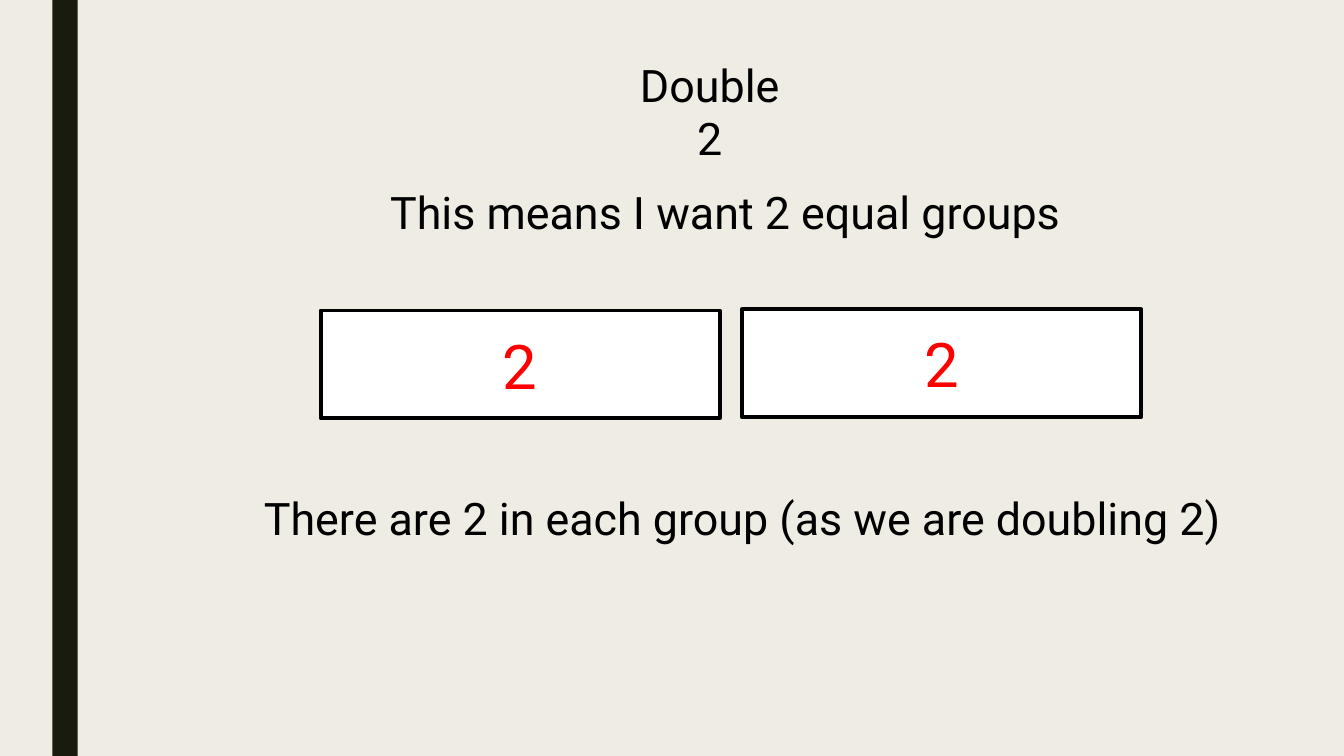
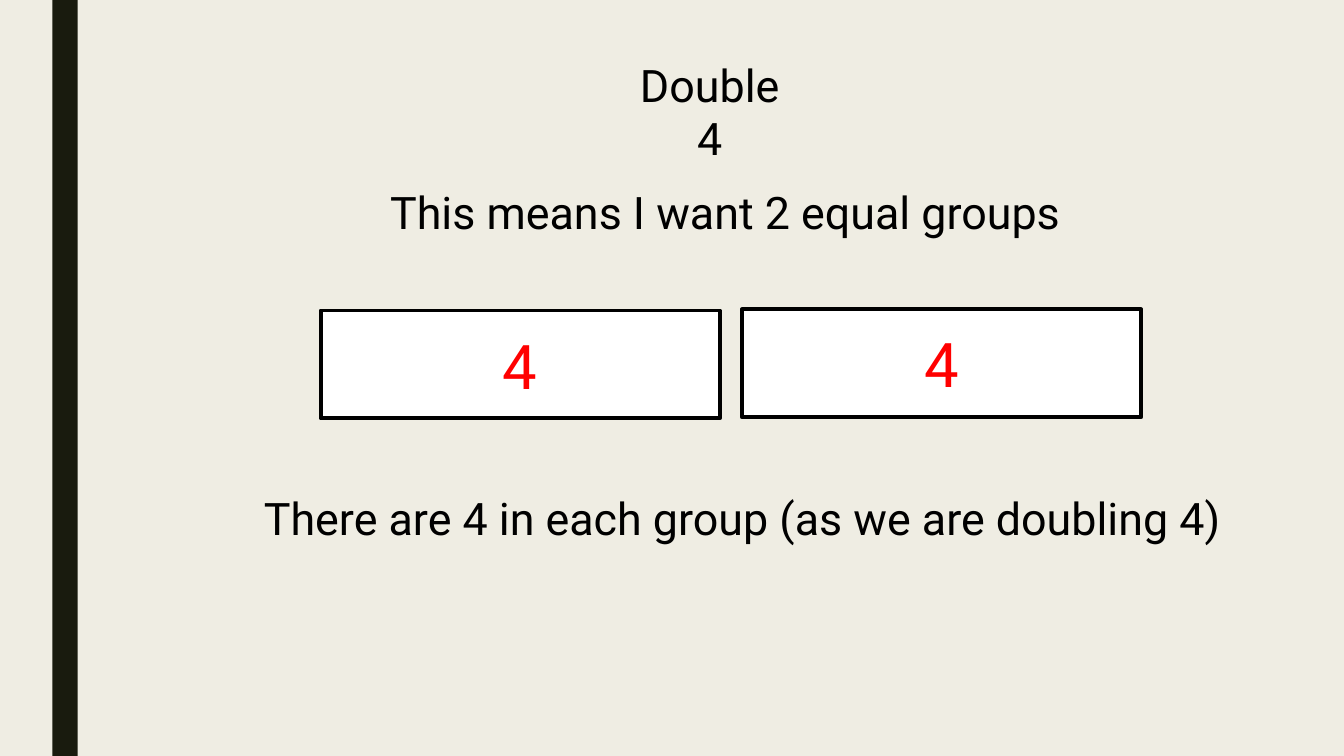
from pptx import Presentation, util as u
from pptx.dml.color import RGBColor
from pptx.enum import shapes, text

WIDTH, HEIGHT = u.Inches(13.333), u.Inches(7.5)
FONT = "Roboto"
COLOURS = {
    "paper": "EFEDE3",
    "band": "191B0E",
    "ink": "000000",
    "group": "FFFFFF",
    "number": "FF0000",
}
# Places are (left, top, width, height) in percent of the slide's size.
BAND = (3.9, 0, 1.88, 100)
TITLE = (45.69, 6.93, 14.25, 15.33)
MEANING = (10.65, 23.73, 86.65, 8.53)
CONCLUSION = (11.93, 64.27, 86.65, 8.53)
GROUPS = [(23.86, 41.07, 29.7, 14.27), (55.21, 40.93, 29.7, 14.27)]


def colour(name):
    return RGBColor.from_string(COLOURS[name])


def place(left, top, width, height):
    """Turn percentages of the slide into lengths."""
    return [round(share * side / 100) for share, side in
            ((left, WIDTH), (top, HEIGHT), (width, WIDTH), (height, HEIGHT))]


def write(shape, words, size, ink):
    frame = shape.text_frame
    frame.word_wrap = True
    frame.text = words
    para = frame.paragraphs[0]
    para.alignment = text.PP_ALIGN.CENTER
    font = para.runs[0].font
    font.name, font.size = FONT, u.Pt(size)
    font.color.rgb = colour(ink)


def add_words(page, area, words):
    box = page.shapes.add_textbox(*place(*area))
    write(box, words, 32, "ink")


def add_rectangle(page, area, fill):
    box = page.shapes.add_shape(shapes.MSO_SHAPE.RECTANGLE, *place(*area))
    box.shadow.inherit = False
    box.fill.solid()
    box.fill.fore_color.rgb = colour(fill)
    box.line.fill.background()
    return box


def add_group(page, area, number):
    box = add_rectangle(page, area, "group")
    box.line.color.rgb = colour("ink")
    box.line.width = u.Pt(2.75)
    box.text_frame.vertical_anchor = text.MSO_ANCHOR.MIDDLE
    write(box, str(number), 44, "number")


def add_doubling_page(deck, number):
    page = deck.slides.add_slide(deck.slide_layouts[6])
    add_rectangle(page, BAND, "band")
    add_words(page, TITLE, f"Double {number}")
    add_words(page, MEANING, "This means I want 2 equal groups")
    for area in GROUPS:
        add_group(page, area, number)
    add_words(page, CONCLUSION,
              f"There are {number} in each group (as we are doubling {number})")


def main():
    deck = Presentation()
    deck.slide_width, deck.slide_height = WIDTH, HEIGHT
    backdrop = deck.slide_master.background.fill
    backdrop.solid()
    backdrop.fore_color.rgb = colour("paper")
    for number in (2, 4):
        add_doubling_page(deck, number)
    deck.save("out.pptx")


if __name__ == "__main__":
    main()
